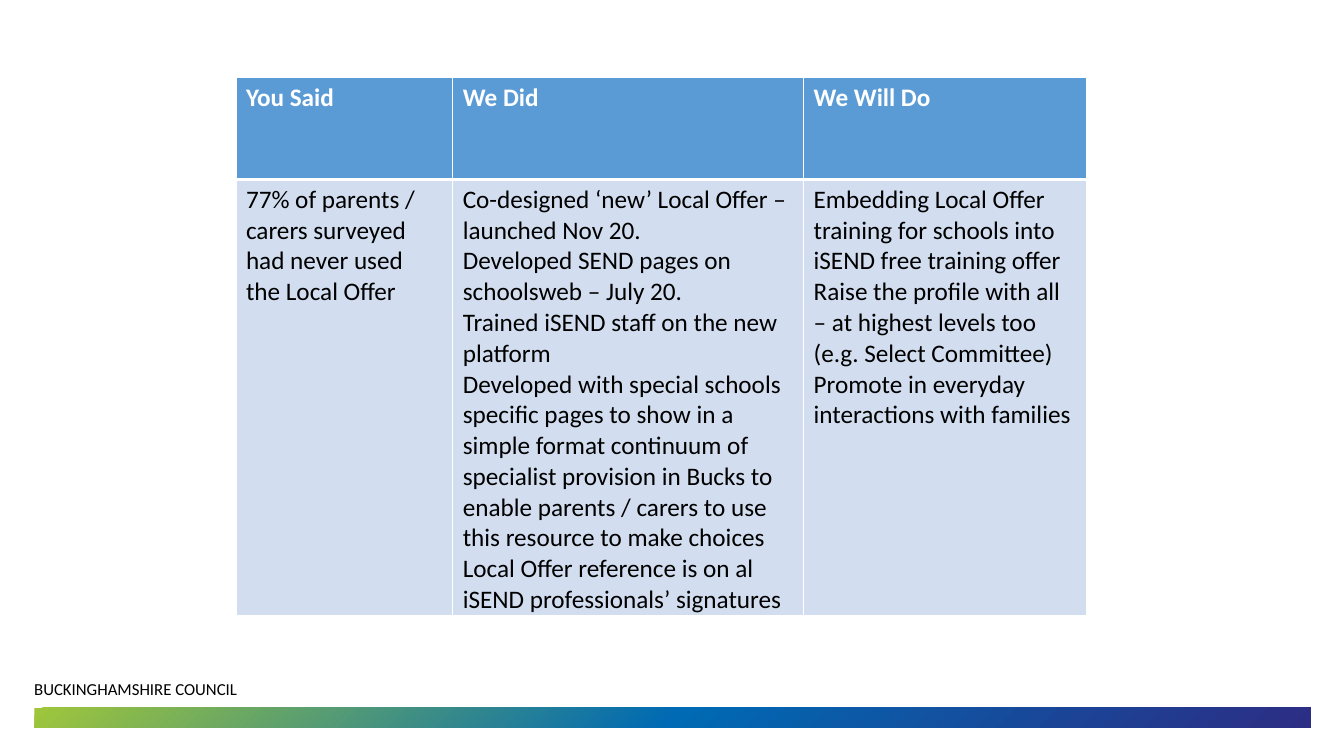
from lxml.etree import SubElement
from pptx import Presentation
from pptx.dml.color import RGBColor
from pptx.enum.shapes import MSO_SHAPE
from pptx.oxml import parse_xml
from pptx.oxml.ns import nsdecls, qn
from pptx.util import Inches, Pt

HEADER_FORMAT = {"name": "Calibri", "size": Pt(18), "bold": True}
BODY_FORMAT = {"name": "Calibri", "size": Pt(18), "bold": False}
FOOTER_FORMAT = {"name": "Calibri", "size": Pt(12)}
COLUMN_WIDTHS = [2.15, 3.48, 2.81]
ROW_HEIGHTS = [1.01, 4.33]
BAND_STOPS = [(0, "2C2D84"), (50, "006AB4"), (100, "9FC63B")]
ROWS = [
    [["You Said"], ["We Did"], ["We Will Do"]],
    [
        ["77% of parents / carers surveyed had never used the Local Offer"],
        [
            "Co-designed ‘new’ Local Offer – launched Nov 20.",
            "Developed SEND pages on schoolsweb – July 20.",
            "Trained iSEND staff on the new platform",
            "Developed with special schools specific pages to show in a simple "
            "format continuum of specialist provision in Bucks to enable "
            "parents / carers to use this resource to make choices",
            "Local Offer reference is on al iSEND professionals’ signatures",
        ],
        [
            "Embedding Local Offer training for schools into iSEND free training offer",
            "Raise the profile with all – at highest levels too (e.g. Select Committee)",
            "Promote in everyday interactions with families",
        ],
    ],
]


def color(value):
    return RGBColor.from_string(value)


def write_paragraphs(text_frame, lines, font_format, text_color):
    for index, line in enumerate(lines):
        paragraph = text_frame.paragraphs[0] if index == 0 else text_frame.add_paragraph()
        run = paragraph.add_run()
        run.text = line
        for name, value in font_format.items():
            setattr(run.font, name, value)
        run.font.color.rgb = color(text_color)


def set_borders(cell, widths):
    properties = cell._tc.get_or_add_tcPr()
    for side, width in widths.items():
        line = SubElement(properties, qn(f"a:ln{side}"), w=str(Pt(width)))
        fill = SubElement(line, qn("a:solidFill"))
        SubElement(fill, qn("a:srgbClr"), val="FFFFFF")


def add_feedback_table(slide, left, top, width, height):
    frame = slide.shapes.add_table(
        len(ROWS), len(COLUMN_WIDTHS),
        Inches(left), Inches(top), Inches(width), Inches(height))
    table = frame.table
    table.horz_banding = False
    for column, column_width in zip(table.columns, COLUMN_WIDTHS):
        column.width = Inches(column_width)
    styles = [
        (HEADER_FORMAT, "FFFFFF", "5B9BD5", {"L": 1, "R": 1, "T": 1, "B": 3}),
        (BODY_FORMAT, "000000", "D2DEEF", {"L": 1, "R": 1, "T": 3, "B": 1}),
    ]
    for row, row_height, texts, style in zip(table.rows, ROW_HEIGHTS, ROWS, styles):
        row.height = Inches(row_height)
        font_format, text_color, fill_color, borders = style
        for cell, lines in zip(row.cells, texts):
            write_paragraphs(cell.text_frame, lines, font_format, text_color)
            set_borders(cell, borders)
            cell.fill.solid()
            cell.fill.fore_color.rgb = color(fill_color)


def add_gradient_band(slide, left, top, width, height):
    band = slide.shapes.add_shape(
        MSO_SHAPE.RECTANGLE, Inches(left), Inches(top), Inches(width), Inches(height))
    band.shadow.inherit = False
    band.line.fill.background()
    properties = band.element.spPr
    properties.find(qn("a:xfrm")).set("flipH", "1")
    stops = "".join(
        f'<a:gs pos="{position * 1000}"><a:srgbClr val="{value}"/></a:gs>'
        for position, value in BAND_STOPS)
    gradient = parse_xml(
        f'<a:gradFill {nsdecls("a")} rotWithShape="1"><a:gsLst>{stops}</a:gsLst>'
        '<a:path path="circle"><a:fillToRect l="100000" t="100000"/></a:path>'
        '</a:gradFill>')
    properties.find(qn("a:prstGeom")).addnext(gradient)


def add_footer(slide, left, top, width, height):
    label = slide.shapes.add_textbox(
        Inches(left), Inches(top), Inches(width), Inches(0.3))
    label.text_frame.word_wrap = True
    write_paragraphs(label.text_frame, ["BUCKINGHAMSHIRE COUNCIL"], FOOTER_FORMAT, "000000")
    add_gradient_band(slide, left + 0.1, top + 0.34, 12.66, height - 0.34)


def main():
    presentation = Presentation()
    presentation.slide_width = Inches(13.33)
    presentation.slide_height = Inches(7.5)
    slide = presentation.slides.add_slide(presentation.slide_layouts[6])
    add_footer(slide, 0.24, 6.68, 6.41, 0.54)
    add_feedback_table(slide, 2.34, 0.77, sum(COLUMN_WIDTHS), sum(ROW_HEIGHTS))
    presentation.save("out.pptx")


if __name__ == "__main__":
    main()
